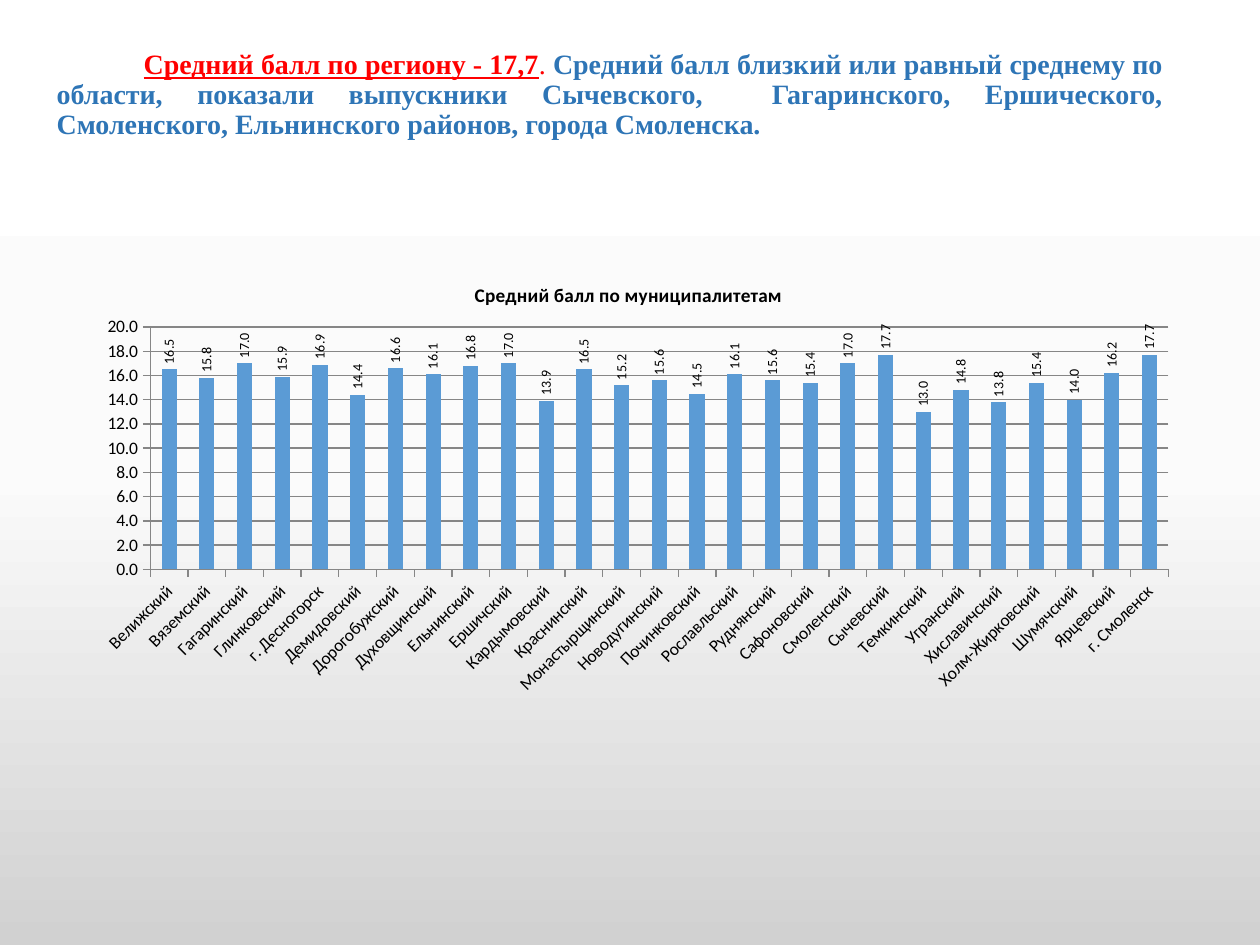
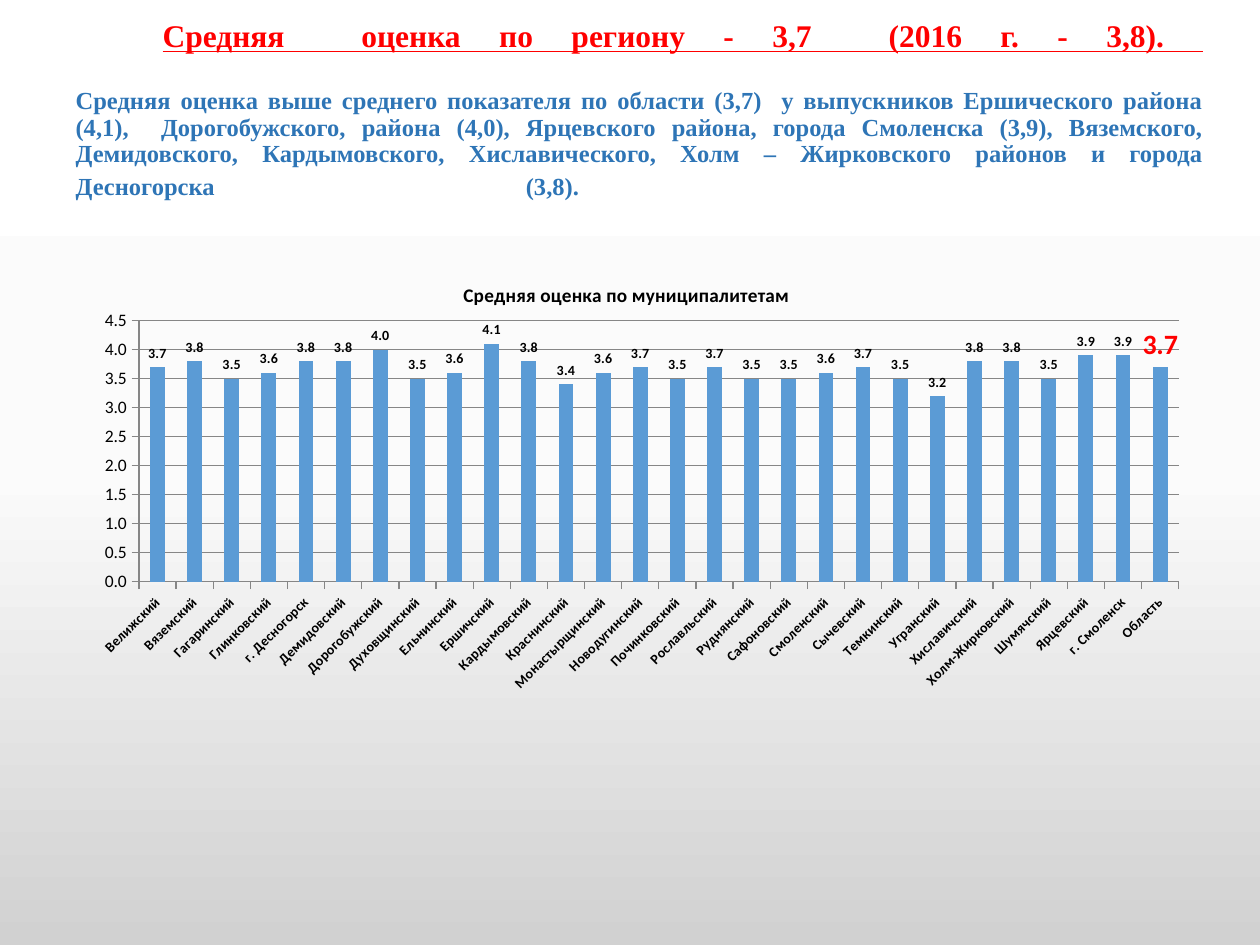
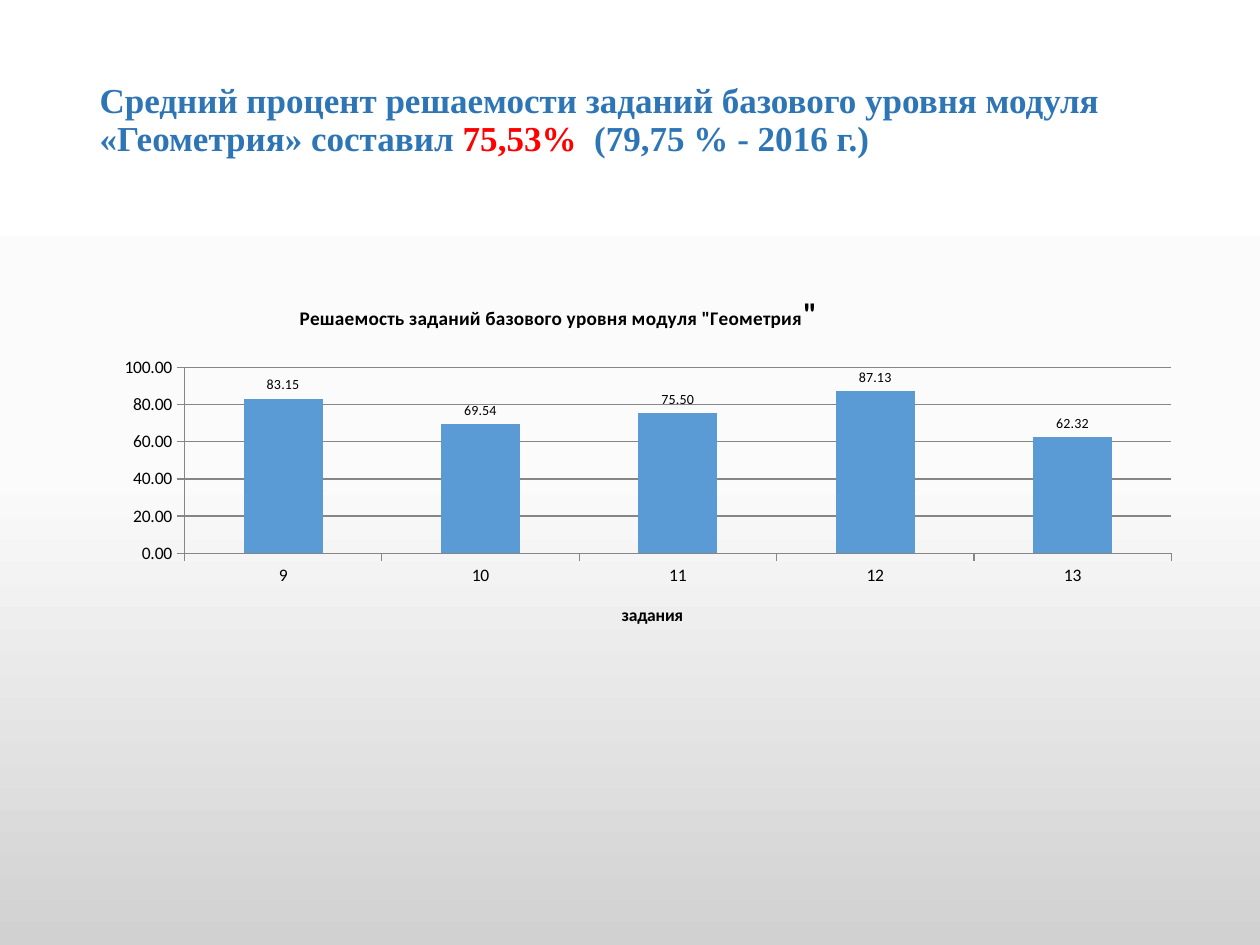
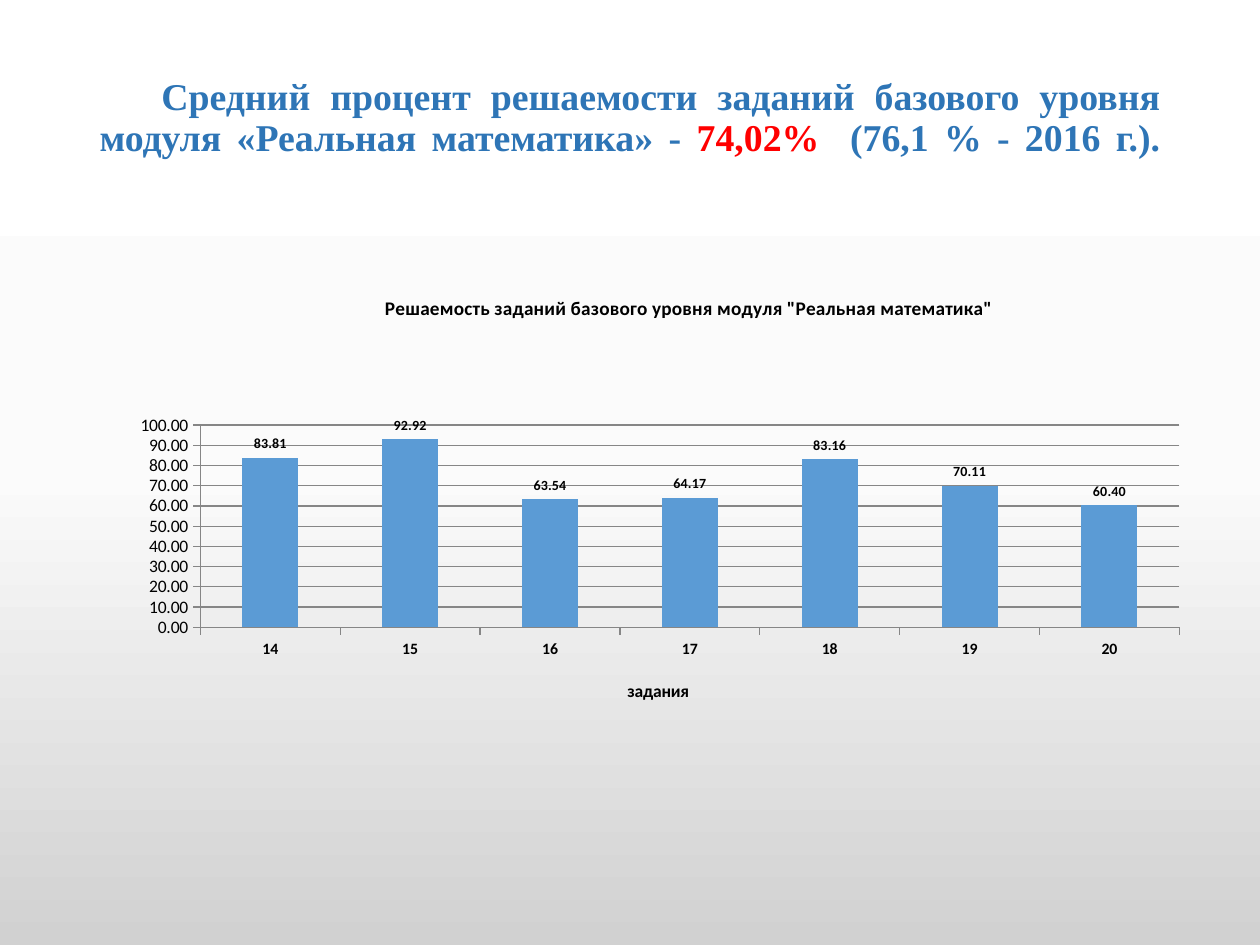
from copy import deepcopy
from dataclasses import dataclass
from typing import Any, Optional

from lxml.etree import SubElement
from pptx import Presentation
from pptx.chart.data import CategoryChartData
from pptx.dml.color import RGBColor
from pptx.enum.chart import XL_CHART_TYPE, XL_LABEL_POSITION, XL_TICK_MARK
from pptx.enum.text import MSO_ANCHOR, MSO_AUTO_SIZE, PP_ALIGN
from pptx.oxml.ns import qn
from pptx.util import Inches, Pt

COLORS = {
    "red": "FF0000",
    "blue": "2E75B6",
    "bar": "5B9BD5",
    "black": "000000",
    "grid": "868686",
}
BACKGROUND = [(0, "FFFFFF"), (0.5, "FBFBFB"), (1, "D1D1D1")]
TITLE_FONT = "Times New Roman"
CHART_FONT = "Calibri"
TITLE_ONLY = 5

DISTRICTS = [
    "Велижский", "Вяземский", "Гагаринский", "Глинковский", "г. Десногорск",
    "Демидовский", "Дорогобужский", "Духовщинский", "Ельнинский", "Ершичский",
    "Кардымовский", "Краснинский", "Монастырщинский", "Новодугинский",
    "Починковский", "Рославльский", "Руднянский", "Сафоновский", "Смоленский",
    "Сычевский", "Темкинский", "Угранский", "Хиславичский", "Холм-Жирковский",
    "Шумячский", "Ярцевский", "г. Смоленск",
]


@dataclass
class Span:
    text: str
    size: float
    color: str
    bold: bool = True
    underline: bool = False
    font: str = TITLE_FONT


@dataclass
class Heading:
    box: tuple[float, float, float, float]
    spans: list[Span]
    indent: float = 0
    align: PP_ALIGN = PP_ALIGN.JUSTIFY


@dataclass
class ColumnChart:
    box: tuple[float, float, float, float]
    plot: tuple[float, float, float, float]
    title: list[Span]
    title_at: tuple[float, float]
    categories: list[str]
    values: list[float]
    top: float
    step: float
    number_format: str
    category_size: float = 10
    category_bold: bool = False
    category_turn: int = 0
    label_bold: bool = False
    label_turn: int = 0
    axis_title_at: Optional[tuple[float, float]] = None
    highlight: Optional[int] = None


def chart_span(text: str, size: float = 11) -> Span:
    return Span(text, size, "black", font=CHART_FONT)


def color(name: str) -> RGBColor:
    return RGBColor.from_string(COLORS[name])


def format_font(font: Any, *, size: float, name: str, fill: str = "black",
                bold: bool = False, underline: Optional[bool] = None) -> None:
    font.size = Pt(size)
    font.name = name
    font.bold = bold
    font.underline = underline
    font.color.rgb = color(fill)


def add_text(para: Any, text: str, **style: Any) -> None:
    for number, line in enumerate(text.split("\n")):
        if number:
            para.add_line_break()
            line_break = para._p.findall(qn("a:br"))[-1]
            line_break.append(deepcopy(para.runs[-1].font._element))
        if line:
            run = para.add_run()
            run.text = line
            format_font(run.font, **style)


def add_spans(para: Any, spans: list[Span]) -> None:
    for span in spans:
        add_text(para, span.text, size=span.size, name=span.font, fill=span.color,
                 bold=span.bold, underline=span.underline)


def place(shape: Any, box: tuple[float, float, float, float]) -> None:
    shape.left, shape.top, shape.width, shape.height = map(Inches, box)


def add_heading(page: Any, heading: Heading) -> None:
    title = page.shapes.title
    place(title, heading.box)
    frame = title.text_frame
    frame.word_wrap = True
    frame.auto_size = MSO_AUTO_SIZE.NONE
    frame.vertical_anchor = MSO_ANCHOR.MIDDLE
    para = frame.paragraphs[0]
    para.alignment = heading.align
    para.line_spacing = 0.9
    properties = para._p.get_or_add_pPr()
    properties.set("marL", "0")
    properties.set("indent", str(Inches(heading.indent)))
    add_spans(para, heading.spans)
    end = SubElement(para._p, qn("a:endParaRPr"))
    end.set("sz", str(round(heading.spans[-1].size * 100)))


def set_layout(parent: Any, index: int, values: dict[str, Any]) -> None:
    for old in parent.findall(qn("c:layout")):
        parent.remove(old)
    layout = SubElement(parent, qn("c:layout"))
    parent.insert(index, layout)
    manual = SubElement(layout, qn("c:manualLayout"))
    for key, value in values.items():
        SubElement(manual, qn(f"c:{key}")).set("val", str(value))


def add_chart_title(owner: Any, spans: list[Span], at: tuple[float, float]) -> None:
    owner.has_title = True
    title = owner.chart_title if hasattr(owner, "chart_title") else owner.axis_title
    add_spans(title.text_frame.paragraphs[0], spans)
    set_layout(title._element, 1,
               {"xMode": "edge", "yMode": "edge", "x": at[0], "y": at[1]})


def turn_text(element: Any, degrees: int) -> None:
    body = element.find(qn("c:txPr")).find(qn("a:bodyPr"))
    body.set("rot", str(degrees * 60000))
    body.set("vert", "horz")


def format_axes(chart: Any, item: ColumnChart) -> None:
    category, value = chart.category_axis, chart.value_axis
    for axis in (category, value):
        axis.major_tick_mark = XL_TICK_MARK.OUTSIDE
        axis.minor_tick_mark = XL_TICK_MARK.NONE
        axis.format.line.color.rgb = color("grid")
    format_font(category.tick_labels.font, size=item.category_size, name=CHART_FONT,
                bold=item.category_bold)
    format_font(value.tick_labels.font, size=10, name=CHART_FONT)
    turn_text(category._element, item.category_turn)
    category.has_major_gridlines = False
    value.has_major_gridlines = True
    value.major_gridlines.format.line.color.rgb = color("grid")
    value.minimum_scale, value.maximum_scale, value.major_unit = 0, item.top, item.step
    value.tick_labels.number_format = item.number_format
    value.tick_labels.number_format_is_linked = False
    if item.axis_title_at:
        add_chart_title(category, [chart_span("задания", 10)], item.axis_title_at)


def format_labels(plot: Any, item: ColumnChart) -> None:
    series = plot.series[0]
    labels = series.data_labels
    labels.show_value = True
    labels.position = XL_LABEL_POSITION.OUTSIDE_END
    labels.number_format = item.number_format
    labels.number_format_is_linked = False
    format_font(labels.font, size=8, name=CHART_FONT, bold=item.label_bold)
    turn_text(labels._element, item.label_turn)
    if item.highlight is not None:
        label = series.points[item.highlight].data_label
        format_font(label.font, size=16, name=CHART_FONT, fill="red", bold=True)
        label.position = XL_LABEL_POSITION.OUTSIDE_END


def add_column_chart(page: Any, item: ColumnChart) -> None:
    data = CategoryChartData(number_format=item.number_format)
    data.categories = item.categories
    data.add_series("Series 1", item.values)
    chart = page.shapes.add_chart(XL_CHART_TYPE.COLUMN_CLUSTERED,
                                  *map(Inches, item.box), data).chart
    format_font(chart.font, size=10, name=CHART_FONT)
    chart.has_legend = False
    add_chart_title(chart, item.title, item.title_at)
    plot = chart.plots[0]
    plot.vary_by_categories = False
    plot.gap_width = 150
    fill = plot.series[0].format.fill
    fill.solid()
    fill.fore_color.rgb = color("bar")
    format_axes(chart, item)
    format_labels(plot, item)
    modes = {"layoutTarget": "inner", "xMode": "edge", "yMode": "edge"}
    set_layout(chart._chartSpace.find(".//" + qn("c:plotArea")), 0,
               modes | dict(zip("xywh", item.plot)))


def paint_background(master: Any) -> None:
    fill = master.background.fill
    fill.gradient()
    fill.gradient_angle = 270
    stop_list = master.element.find(".//" + qn("p:bg")).find(".//" + qn("a:gsLst"))
    stop_list.append(deepcopy(stop_list[0]))
    for stop, (position, shade) in zip(fill.gradient_stops, BACKGROUND):
        stop.position = position
        stop.color.rgb = RGBColor.from_string(shade)


DISTRICT_BOX = (0.5, 2.02, 9, 4.68)
MODULE_HEADING_BOX = (0.69, 0.4, 8.62, 1.45)

PAGES = [
    (
        Heading((0.35, 0.13, 8.98, 1.26), [
            Span("Средний балл по региону - 17,7", 16, "red", underline=True),
            Span(". ", 16, "red", bold=False),
            Span("Средний балл близкий или равный среднему по области, показали "
                 "выпускники Сычевского,  Гагаринского, Ершического, Смоленского, "
                 "Ельнинского районов, города Смоленска.", 16, "blue"),
        ], indent=0.69),
        ColumnChart(
            DISTRICT_BOX, (0.077, 0.123, 0.898, 0.411),
            [chart_span("Средний балл по муниципалитетам")], (0.36, 0.04), DISTRICTS,
            [16.5, 15.8, 17, 15.9, 16.9, 14.4, 16.6, 16.1, 16.8, 17, 13.9, 16.5, 15.2,
             15.6, 14.5, 16.1, 15.6, 15.4, 17, 17.7, 13, 14.8, 13.8, 15.4, 14, 16.2,
             17.7],
            20, 2, "0.0", category_turn=-45, label_turn=-90),
    ),
    (
        Heading((0.5, 0.13, 9.15, 1.81), [
            Span("Средняя  оценка по региону - 3,7  (2016 г. - 3,8). \n\n", 18, "red",
                 underline=True),
            Span("Средняя оценка выше среднего показателя по области (3,7)  у "
                 "выпускников Ершического района (4,1),  Дорогобужского, района (4,0), "
                 "Ярцевского района, города Смоленска (3,9), Вяземского, Демидовского, "
                 "Кардымовского, Хиславического, Холм – Жирковского районов и города "
                 "Десногорска (3,8). ", 14, "blue"),
            Span(" \n", 18, "black", bold=False),
        ], indent=0.69),
        ColumnChart(
            DISTRICT_BOX, (0.067, 0.112, 0.917, 0.443),
            [chart_span("Средняя оценка по муниципалитетам")], (0.35, 0.04),
            DISTRICTS + ["Область"],
            [3.7, 3.8, 3.5, 3.6, 3.8, 3.8, 4, 3.5, 3.6, 4.1, 3.8, 3.4, 3.6, 3.7, 3.5,
             3.7, 3.5, 3.5, 3.6, 3.7, 3.5, 3.2, 3.8, 3.8, 3.5, 3.9, 3.9, 3.7],
            4.5, 0.5, "0.0", category_size=8, category_bold=True, category_turn=-45,
            label_bold=True, highlight=len(DISTRICTS)),
    ),
    (
        Heading(MODULE_HEADING_BOX, [
            Span("Средний процент решаемости заданий базового уровня модуля "
                 "«Геометрия» составил ", 20, "blue"),
            Span("75,53%", 20, "red"),
            Span("  (79,75 % - 2016 г.)\n", 20, "blue"),
        ], align=PP_ALIGN.LEFT),
        ColumnChart(
            (0.67, 2.18, 8.83, 3.86), (0.09, 0.191, 0.887, 0.382),
            [chart_span('Решаемость заданий базового уровня модуля "Геометрия'),
             chart_span('"', 18)], (0.19, 0.03),
            ["9", "10", "11", "12", "13"], [83.15, 69.54, 75.5, 87.13, 62.32],
            100, 20, "0.00", axis_title_at=(0.48, 0.67)),
    ),
    (
        Heading(MODULE_HEADING_BOX, [
            Span("Средний процент решаемости заданий базового уровня модуля "
                 "«Реальная математика» - ", 21.6, "blue"),
            Span("74,02%", 21.6, "red"),
            Span("  (76,1 % - 2016 г.).\n", 21.6, "blue"),
        ], indent=0.49),
        ColumnChart(
            (0.75, 2.18, 8.76, 4.56), (0.096, 0.262, 0.887, 0.352),
            [chart_span('Решаемость заданий базового уровня модуля '
                        '"Реальная математика"')], (0.26, 0.03),
            ["14", "15", "16", "17", "18", "19", "20"],
            [83.81, 92.92, 63.54, 64.17, 83.16, 70.11, 60.4],
            100, 10, "0.00", category_size=9, category_bold=True, label_bold=True,
            axis_title_at=(0.48, 0.7)),
    ),
]


def main() -> None:
    deck = Presentation()
    deck.slide_width, deck.slide_height = Inches(10), Inches(7.5)
    paint_background(deck.slide_master)
    for heading, chart in PAGES:
        page = deck.slides.add_slide(deck.slide_layouts[TITLE_ONLY])
        add_heading(page, heading)
        add_column_chart(page, chart)
    deck.save("out.pptx")


if __name__ == "__main__":
    main()
